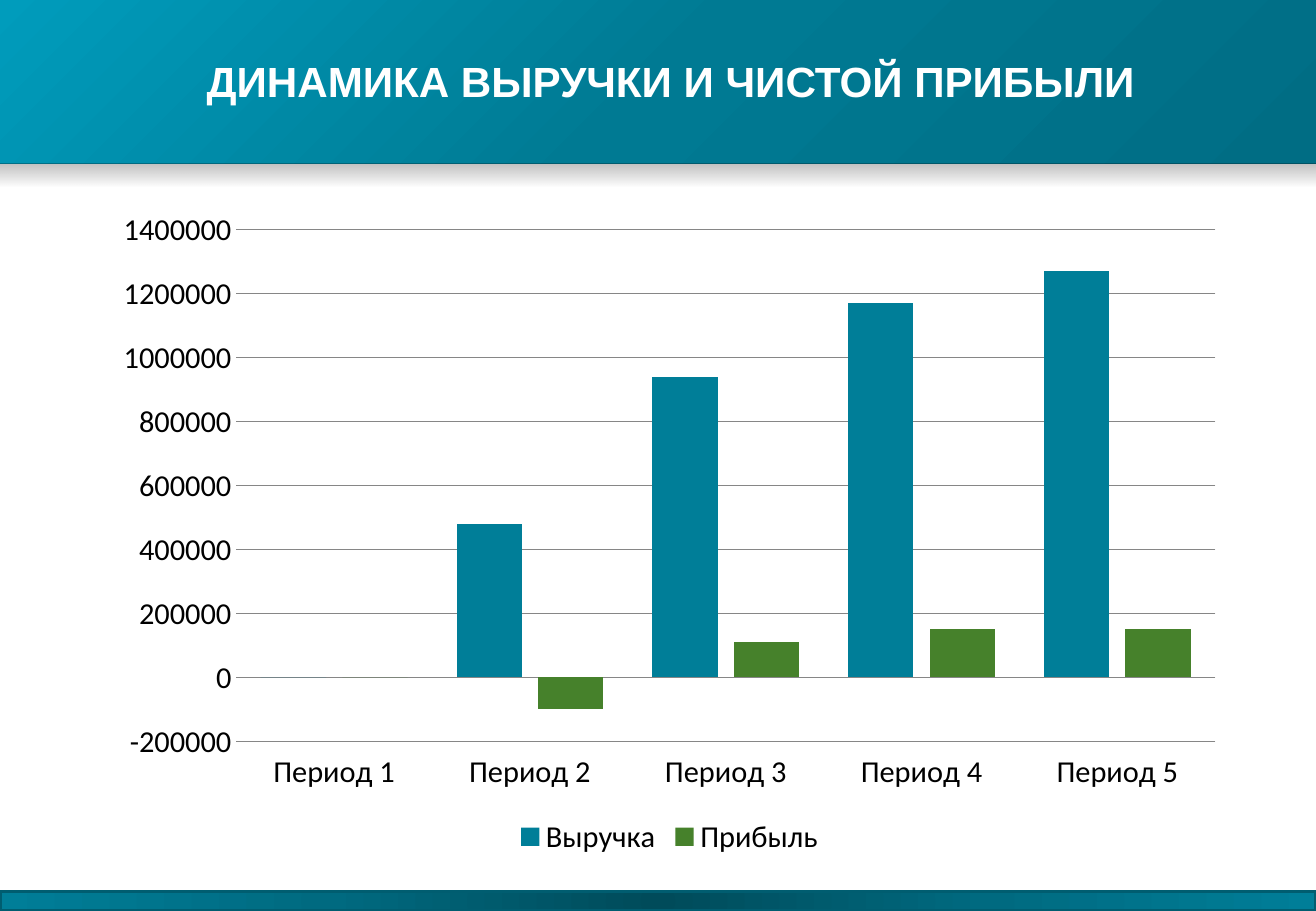
from dataclasses import dataclass

import pptx
import pptx.chart.data
import pptx.dml.color
import pptx.enum.chart
import pptx.enum.shapes
import pptx.enum.text
import pptx.oxml
import pptx.oxml.ns
import pptx.util
from pptx.util import Cm, Pt

COLORS = {
    "white": "FFFFFF",
    "black": "000000",
    "grid": "868686",
    "teal": "007E98",
    "green": "46812B",
    "header dark": "006D84",
    "header mid": "007A93",
    "header light": "009CBC",
    "footer dark": "004B5A",
    "footer mid": "006A80",
    "footer line": "005D70",
}
SLIDE_WIDTH, SLIDE_HEIGHT = 27.51, 19.05


@dataclass(frozen=True)
class Stop:
    position: int
    color: str
    opacity: int = 100


@dataclass(frozen=True)
class Band:
    """A full-width strip; without an angle its gradient spreads from the centre."""
    top: float
    height: float
    stops: tuple[Stop, ...]
    angle: int | None = None
    outline: str | None = None


@dataclass(frozen=True)
class Series:
    name: str
    values: tuple[int, ...]
    color: str


BANDS = (
    Band(0, 3.43, (Stop(0, "header dark"), Stop(50, "header mid"),
                   Stop(100, "header light")), angle=225),
    Band(3.43, 0.48, (Stop(0, "black", 26), Stop(100, "black", 0)), angle=90),
    Band(18.64, 0.41, (Stop(0, "footer dark"), Stop(50, "footer mid"),
                       Stop(100, "teal")), outline="footer line"),
)
PERIODS = [f"Период {number}" for number in range(1, 6)]
SERIES = (
    Series("Выручка", (0, 480000, 940000, 1170000, 1270000), "teal"),
    Series("Прибыль", (0, -100000, 110000, 150000, 150000), "green"),
)


def rgb(name: str) -> pptx.dml.color.RGBColor:
    return pptx.dml.color.RGBColor.from_string(COLORS[name])


def gradient_xml(band: Band) -> str:
    stops = "".join(
        f'<a:gs pos="{stop.position * 1000}"><a:srgbClr val="{COLORS[stop.color]}">'
        f'<a:alpha val="{stop.opacity * 1000}"/></a:srgbClr></a:gs>'
        for stop in band.stops
    )
    if band.angle is None:
        direction = ('<a:path path="circle"><a:fillToRect l="50000" t="50000" '
                     'r="50000" b="50000"/></a:path>')
    else:
        direction = f'<a:lin ang="{band.angle * 60000}" scaled="0"/>'
    return (f'<a:gradFill {pptx.oxml.ns.nsdecls("a")} rotWithShape="1">'
            f"<a:gsLst>{stops}</a:gsLst>{direction}</a:gradFill>")


def draw_band(slide: pptx.slide.Slide, band: Band) -> None:
    strip = slide.shapes.add_shape(
        pptx.enum.shapes.MSO_SHAPE.RECTANGLE,
        0, Cm(band.top), Cm(SLIDE_WIDTH), Cm(band.height))
    strip.shadow.inherit = False
    strip.fill.background()
    properties = strip._element.spPr
    placeholder_fill = properties.find(pptx.oxml.ns.qn("a:noFill"))
    properties.replace(placeholder_fill, pptx.oxml.parse_xml(gradient_xml(band)))
    if band.outline:
        strip.line.color.rgb = rgb(band.outline)
        strip.line.width = Pt(2)
    else:
        strip.line.fill.background()


def write_title(slide: pptx.slide.Slide) -> None:
    title = slide.shapes.title
    title.left, title.top, title.width, title.height = Cm(4.32), Cm(1.04), Cm(19.56), Cm(1.3)
    # The title stands in front of the bands
    slide.shapes._spTree.append(title._element)
    frame = title.text_frame
    frame.text = "ДИНАМИКА ВЫРУЧКИ И ЧИСТОЙ ПРИБЫЛИ"
    frame.margin_left = frame.margin_right = 0
    frame.word_wrap = True
    frame.auto_size = pptx.enum.text.MSO_AUTO_SIZE.NONE
    frame.vertical_anchor = pptx.enum.text.MSO_ANCHOR.MIDDLE
    heading = frame.paragraphs[0]
    heading.alignment = pptx.enum.text.PP_ALIGN.LEFT
    font = heading.runs[0].font
    font.name, font.size, font.bold = "Arial", Pt(25), True
    font.color.rgb = rgb("white")


def draw_chart(slide: pptx.slide.Slide) -> None:
    figures = pptx.chart.data.CategoryChartData()
    figures.categories = PERIODS
    for series in SERIES:
        figures.add_series(series.name, series.values)
    chart = slide.shapes.add_chart(
        pptx.enum.chart.XL_CHART_TYPE.COLUMN_CLUSTERED,
        Cm(2.11), Cm(4.14), Cm(23.77), Cm(13.87), figures).chart
    chart.has_title = False
    chart.font.name, chart.font.size = "Calibri", Pt(18)
    chart.font.color.rgb = rgb("black")

    chart.has_legend = True
    chart.legend.position = pptx.enum.chart.XL_LEGEND_POSITION.BOTTOM
    chart.legend.include_in_layout = False

    columns = chart.plots[0]
    columns.gap_width, columns.overlap = 75, -25
    columns.vary_by_categories = False
    for drawn, series in zip(columns.series, SERIES):
        drawn.invert_if_negative = False
        drawn.format.fill.solid()
        drawn.format.fill.fore_color.rgb = rgb(series.color)

    periods, amounts = chart.category_axis, chart.value_axis
    for axis in (periods, amounts):
        axis.major_tick_mark = axis.minor_tick_mark = pptx.enum.chart.XL_TICK_MARK.NONE
    periods.tick_label_position = pptx.enum.chart.XL_TICK_LABEL_POSITION.LOW
    amounts.minimum_scale, amounts.maximum_scale = -200000, 1400000
    amounts.major_unit = 200000
    amounts.format.line.fill.background()
    amounts.has_major_gridlines = True
    for line in (periods.format.line, amounts.major_gridlines.format.line):
        line.color.rgb = rgb("grid")
        line.width = Pt(0.75)


def main() -> None:
    presentation = pptx.Presentation()
    presentation.slide_width = Cm(SLIDE_WIDTH)
    presentation.slide_height = Cm(SLIDE_HEIGHT)
    slide = presentation.slides.add_slide(presentation.slide_layouts[5])
    for band in BANDS:
        draw_band(slide, band)
    write_title(slide)
    draw_chart(slide)
    presentation.save("out.pptx")


if __name__ == "__main__":
    main()
